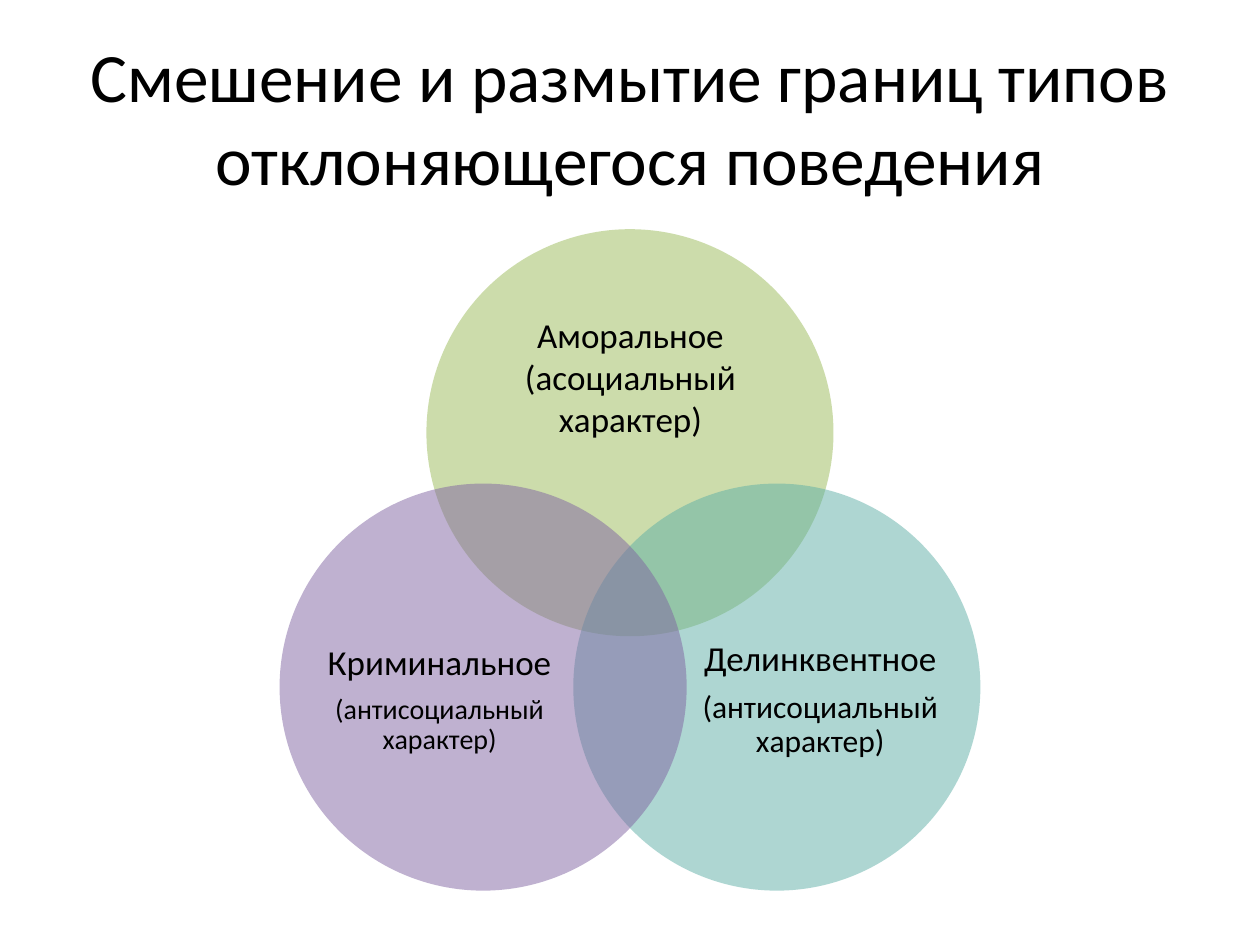
"""Build a slide with a three-circle Venn diagram of deviant behaviour types."""
import dataclasses
import math

import lxml.etree
import pptx
import pptx.dml.color
import pptx.enum.shapes
import pptx.enum.text
import pptx.oxml.ns
import pptx.util

Pt = pptx.util.Pt


@dataclasses.dataclass(frozen=True)
class Theme:
    font: str = "Calibri"
    ink: str = "000000"
    amoral: str = "9BBB59"
    delinquent: str = "5EAFA6"
    criminal: str = "8064A2"
    opacity: int = 50
    title_size: float = 39.6
    label_size: int = 20
    wide_note_size: int = 18
    small_note_size: int = 16


def add_text(para, text, *, font, size, color, line=None, after=None):
    span = para.add_run()
    span.text = text
    span.font.name = font
    span.font.size = Pt(size)
    span.font.color.rgb = pptx.dml.color.RGBColor.from_string(color)
    para.alignment = pptx.enum.text.PP_ALIGN.CENTER
    if line is not None:
        para.line_spacing = line
    if after is not None:
        para.space_after = Pt(after)


class SlideBuilder:
    def __init__(self, page, theme):
        self.page = page
        self.theme = theme

    def place(self, shape, left, top, width, height):
        shape.left, shape.top = Pt(left), Pt(top)
        shape.width, shape.height = Pt(width), Pt(height)

    def title(self, text, *bounds):
        box = self.page.shapes.title
        self.place(box, *bounds)
        frame = box.text_frame
        frame.vertical_anchor = pptx.enum.text.MSO_ANCHOR.MIDDLE
        add_text(frame.paragraphs[0], text, font=self.theme.font,
                 size=self.theme.title_size, color=self.theme.ink)

    def circle(self, center_x, center_y, diameter, color):
        shape = self.page.shapes.add_shape(
            pptx.enum.shapes.MSO_SHAPE.OVAL,
            Pt(center_x - diameter / 2), Pt(center_y - diameter / 2),
            Pt(diameter), Pt(diameter))
        shape.shadow.inherit = False
        shape.line.fill.background()
        shape.fill.solid()
        shape.fill.fore_color.rgb = pptx.dml.color.RGBColor.from_string(color)
        qn = pptx.oxml.ns.qn
        fill_color = shape.element.spPr.find(f"{qn('a:solidFill')}/{qn('a:srgbClr')}")
        alpha = lxml.etree.SubElement(fill_color, qn("a:alpha"))
        alpha.set("val", str(self.theme.opacity * 1000))

    def label(self, bounds, lines, bottom=0, line=None, after_ratio=0):
        box = self.page.shapes.add_textbox(*map(Pt, bounds))
        frame = box.text_frame
        frame.word_wrap = True
        frame.vertical_anchor = pptx.enum.text.MSO_ANCHOR.MIDDLE
        frame.margin_left = frame.margin_top = frame.margin_right = 0
        frame.margin_bottom = Pt(bottom)
        for index, (text, size) in enumerate(lines):
            para = frame.add_paragraph() if index else frame.paragraphs[0]
            add_text(para, text, font=self.theme.font, size=size,
                     color=self.theme.ink, line=line, after=size * after_ratio)


def main():
    theme = Theme()
    deck = pptx.Presentation()
    deck.slide_width, deck.slide_height = Pt(720), Pt(540)
    slide = SlideBuilder(deck.slides.add_slide(deck.slide_layouts[5]), theme)
    slide.title("Смешение и размытие границ типов отклоняющегося поведения",
                36, 21.6, 648, 90)

    note = "(антисоциальный характер)"
    spaced = {"line": 0.9, "after_ratio": 0.35}
    circles = [
        (theme.amoral, (275, 171.4, 170.6, 104.4),
         [("Аморальное (асоциальный характер)", theme.label_size)], {"bottom": 17}),
        (theme.delinquent, (398.9, 336.2, 139.7, 128.2),
         [("Делинквентное", theme.label_size), (note, theme.wide_note_size)], spaced),
        (theme.criminal, (181.4, 336.2, 139.7, 128.2),
         [("Криминальное", theme.label_size), (note, theme.small_note_size)], spaced),
    ]
    middle_x, middle_y, orbit, diameter = 360, 344.2, 96.9, 232.6
    for index, (color, bounds, lines, options) in enumerate(circles):
        angle = math.radians(120 * index - 90)
        slide.circle(middle_x + orbit * math.cos(angle),
                     middle_y + orbit * math.sin(angle), diameter, color)
        slide.label(bounds, lines, **options)
    deck.save("out.pptx")


if __name__ == "__main__":
    main()
